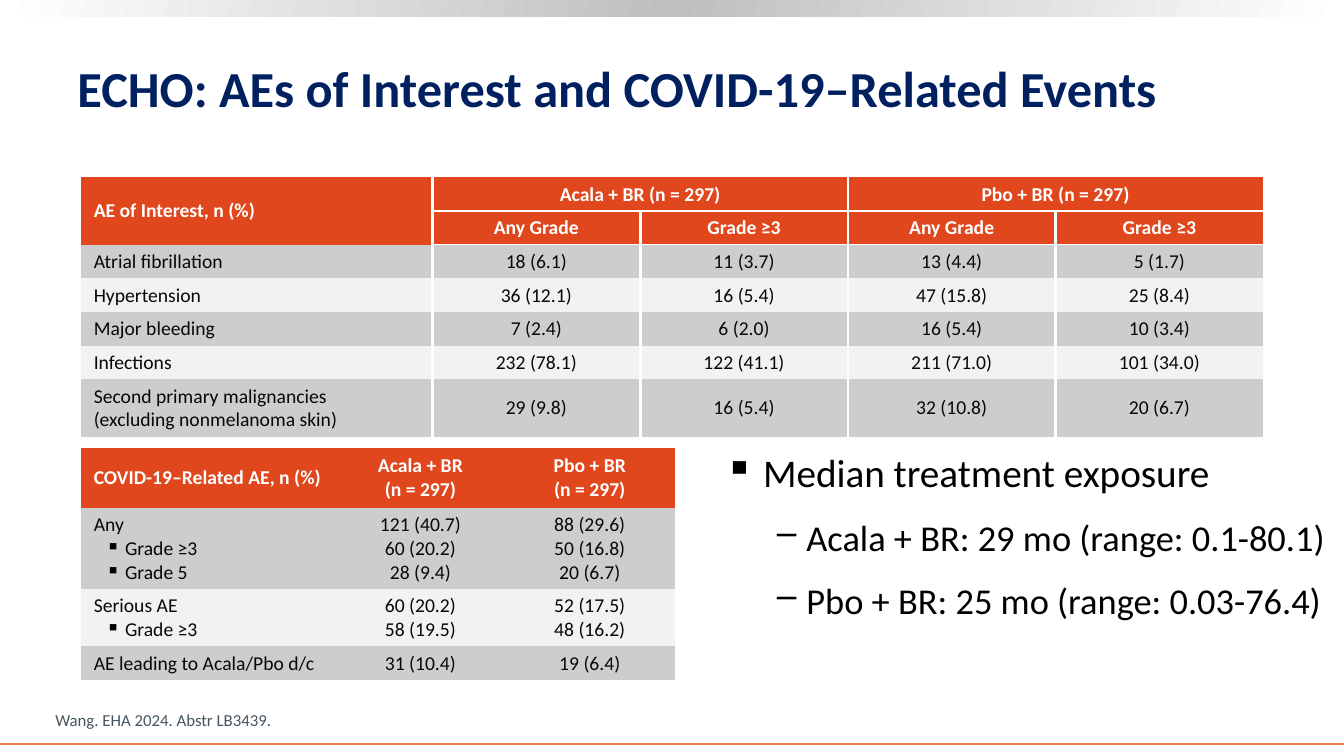
from dataclasses import dataclass

from lxml import etree
from pptx import Presentation, util as u
from pptx.dml.color import RGBColor
from pptx.enum import shapes, text
from pptx.oxml import parse_xml
from pptx.oxml.ns import nsdecls, qn

FONT = "Calibri"
WHITE, BLACK, NAVY, SLATE, INK = "FFFFFF", "000000", "002060", "455560", "07080A"
ORANGE, CORAL, BANDS = "E1471D", "F47D55", ("CDCDCF", "F2F2F2")
NO_STYLE = "{2D5ABB26-0587-4C30-8999-92F81FD0307C}"
BULLET = "▪"
CENTER = text.PP_ALIGN.CENTER


@dataclass
class Line:
    words: str
    size: float
    color: str = BLACK
    bold: bool = False
    bullet: str = ""
    margin: float = 0
    hanging: float = 0


@dataclass
class TextBox:
    box: tuple[float, float, float, float]
    lines: list[Line]
    anchor: text.MSO_ANCHOR
    spacing: dict


@dataclass
class Grid:
    left: float
    top: float
    columns: list[float]
    heights: list[float]
    header_rows: int
    rows: list[list[str]]


TEXT_BOXES = [
    TextBox((0.67, 0.26, 12.18, 1.21),
            [Line("ECHO: AEs of Interest and COVID-19–Related Events", 36, NAVY, True)],
            text.MSO_ANCHOR.MIDDLE, {}),
    TextBox((7.09, 4.45, 6.24, 2.31),
            [Line("Median treatment exposure", 28, bullet=BULLET, margin=0.38, hanging=0.38),
             Line("Acala + BR: 29 mo (range: 0.1-80.1)", 26, bullet="‒", margin=0.81, hanging=0.31),
             Line("Pbo + BR: 25 mo (range: 0.03-76.4)", 26, bullet="‒", margin=0.81, hanging=0.31)],
            text.MSO_ANCHOR.TOP,
            {"line_spacing": 0.9, "space_before": u.Pt(10), "space_after": u.Pt(7)}),
    TextBox((0.45, 6.99, 8.59, 0.3), [Line("Wang. EHA 2024. Abstr LB3439.", 12, SLATE)],
            text.MSO_ANCHOR.BOTTOM, {}),
]

INTEREST = Grid(0.8, 1.76, [3.49] + [2.06] * 4, [0.33] * 6 + [0.57], 2, [
    ["AE of Interest, n (%)", "Acala + BR (n = 297)", "", "Pbo + BR (n = 297)", ""],
    ["", "Any Grade", "Grade ≥3", "Any Grade", "Grade ≥3"],
    ["Atrial fibrillation", "18 (6.1)", "11 (3.7)", "13 (4.4)", "5 (1.7)"],
    ["Hypertension", "36 (12.1)", "16 (5.4)", "47 (15.8)", "25 (8.4)"],
    ["Major bleeding", "7 (2.4)", "6 (2.0)", "16 (5.4)", "10 (3.4)"],
    ["Infections", "232 (78.1)", "122 (41.1)", "211 (71.0)", "101 (34.0)"],
    ["Second primary malignancies\n(excluding nonmelanoma skin)",
     "29 (9.8)", "16 (5.4)", "32 (10.8)", "20 (6.7)"],
])
COVID = Grid(0.8, 4.44, [2.53, 1.68, 1.68], [0.6, 0.8, 0.57, 0.34], 1, [
    ["COVID-19–Related AE, n (%)", "Acala + BR\n(n = 297)", "Pbo + BR\n(n = 297)"],
    ["Any\n▪Grade ≥3\n▪Grade 5", "121 (40.7)\n60 (20.2)\n28 (9.4)", "88 (29.6)\n50 (16.8)\n20 (6.7)"],
    ["Serious AE\n▪Grade ≥3", "60 (20.2)\n58 (19.5)", "52 (17.5)\n48 (16.2)"],
    ["AE leading to Acala/Pbo d/c", "31 (10.4)", "19 (6.4)"],
])


def rgb(value: str) -> RGBColor:
    return RGBColor.from_string(value)


def set_all(target, values: dict) -> None:
    for name, value in values.items():
        setattr(target, name, value)


def write_lines(frame, lines: list[Line], paragraph_format: dict) -> None:
    for index, line in enumerate(lines):
        paragraph = frame.paragraphs[0] if index == 0 else frame.add_paragraph()
        if line.bullet:
            properties = paragraph._p.get_or_add_pPr()
            properties.set("marL", str(u.Inches(line.margin)))
            properties.set("indent", str(-u.Inches(line.hanging)))
            color = etree.SubElement(properties, qn("a:buClr"))
            etree.SubElement(color, qn("a:srgbClr"), val=BLACK)
            etree.SubElement(properties, qn("a:buChar"), char=line.bullet)
        set_all(paragraph, paragraph_format)
        if index == 0:
            paragraph.space_before = u.Pt(0)
        run = paragraph.add_run()
        run.text = line.words
        set_all(run.font, {"name": FONT, "size": u.Pt(line.size), "bold": line.bold})
        run.font.color.rgb = rgb(line.color)


def add_text_box(slide, item: TextBox) -> None:
    frame = slide.shapes.add_textbox(*map(u.Inches, item.box)).text_frame
    set_all(frame, {"word_wrap": True, "vertical_anchor": item.anchor})
    write_lines(frame, item.lines, item.spacing)


def add_grid(slide, grid: Grid):
    frame = slide.shapes.add_table(
        len(grid.rows), len(grid.columns), u.Inches(grid.left), u.Inches(grid.top),
        u.Inches(sum(grid.columns)), u.Inches(sum(grid.heights)))
    table = frame.table
    set_all(table, {"first_row": False, "horz_banding": False})
    table._tbl.tblPr.find(qn("a:tableStyleId")).text = NO_STYLE
    for column, width in zip(table.columns, grid.columns):
        column.width = u.Inches(width)
    for row, height in zip(table.rows, grid.heights):
        row.height = u.Inches(height)
    for r, values in enumerate(grid.rows):
        header = r < grid.header_rows
        for c, value in enumerate(values):
            cell = table.cell(r, c)
            set_all(cell, {"vertical_anchor": text.MSO_ANCHOR.MIDDLE,
                           "margin_left": u.Inches(0.13), "margin_right": u.Inches(0.13),
                           "margin_top": u.Inches(0.05), "margin_bottom": u.Inches(0.05)})
            cell.fill.solid()
            cell.fill.fore_color.rgb = rgb(ORANGE if header else BANDS[(r - grid.header_rows) % 2])
            lines = [Line(words.lstrip(BULLET), 14, WHITE if header else INK, header,
                          BULLET if words.startswith(BULLET) else "", 0.31, 0.19)
                     for words in value.split("\n") if words]
            write_lines(cell.text_frame, lines, {"alignment": CENTER} if c else {})
    return table


def add_borders(cell, widths: dict[str, float]) -> None:
    """Add white edges; widths are keyed by side in the order L, R, T, B."""
    properties = cell._tc.get_or_add_tcPr()
    for index, (side, width) in enumerate(widths.items()):
        properties.insert(index, parse_xml(
            f'<a:ln{side} {nsdecls("a")} w="{u.Pt(width)}"><a:solidFill>'
            f'<a:srgbClr val="{WHITE}"/></a:solidFill></a:ln{side}>'))


def add_interest_table(slide) -> None:
    table = add_grid(slide, INTEREST)
    for r in range(len(INTEREST.rows)):
        for c in range(len(INTEREST.columns)):
            widths = {"L": 2.25} if c in (1, 3) else {"R": 2.25} if c in (0, 2) else {}
            if c and r < 2:
                widths["B" if r == 0 else "T"] = 1
            add_borders(table.cell(r, c), widths)
    for first, last in (((0, 0), (1, 0)), ((0, 1), (0, 2)), ((0, 3), (0, 4))):
        table.cell(*first).merge(table.cell(*last))


def add_top_band(slide) -> None:
    band = slide.shapes.add_shape(shapes.MSO_SHAPE.RECTANGLE, 0, 0, u.Inches(13.33), u.Inches(0.16))
    band.shadow.inherit = False
    band.line.fill.background()
    stops = "".join(f'<a:gs pos="{position}"><a:srgbClr val="{color}"/></a:gs>'
                    for position, color in ((0, WHITE), (50000, "BFBFBF"), (100000, WHITE)))
    band._element.spPr.find(qn("a:prstGeom")).addnext(parse_xml(
        f'<a:gradFill {nsdecls("a")}><a:gsLst>{stops}</a:gsLst>'
        f'<a:lin ang="{190 * 60000}" scaled="0"/></a:gradFill>'))


def add_bottom_rule(slide) -> None:
    rule = slide.shapes.add_connector(shapes.MSO_CONNECTOR.STRAIGHT, 0, u.Inches(7.38),
                                      u.Inches(13.33), u.Inches(7.38))
    rule.line.color.rgb = rgb(CORAL)
    rule.line.width = u.Pt(1.5)
    etree.SubElement(rule._element.spPr, qn("a:effectLst"))


def main() -> None:
    presentation = Presentation()
    set_all(presentation, {"slide_width": u.Inches(13.33), "slide_height": u.Inches(7.5)})
    slide = presentation.slides.add_slide(presentation.slide_layouts[6])
    add_top_band(slide)
    add_bottom_rule(slide)
    for item in TEXT_BOXES:
        add_text_box(slide, item)
    add_interest_table(slide)
    add_grid(slide, COVID)
    presentation.save("out.pptx")


if __name__ == "__main__":
    main()
